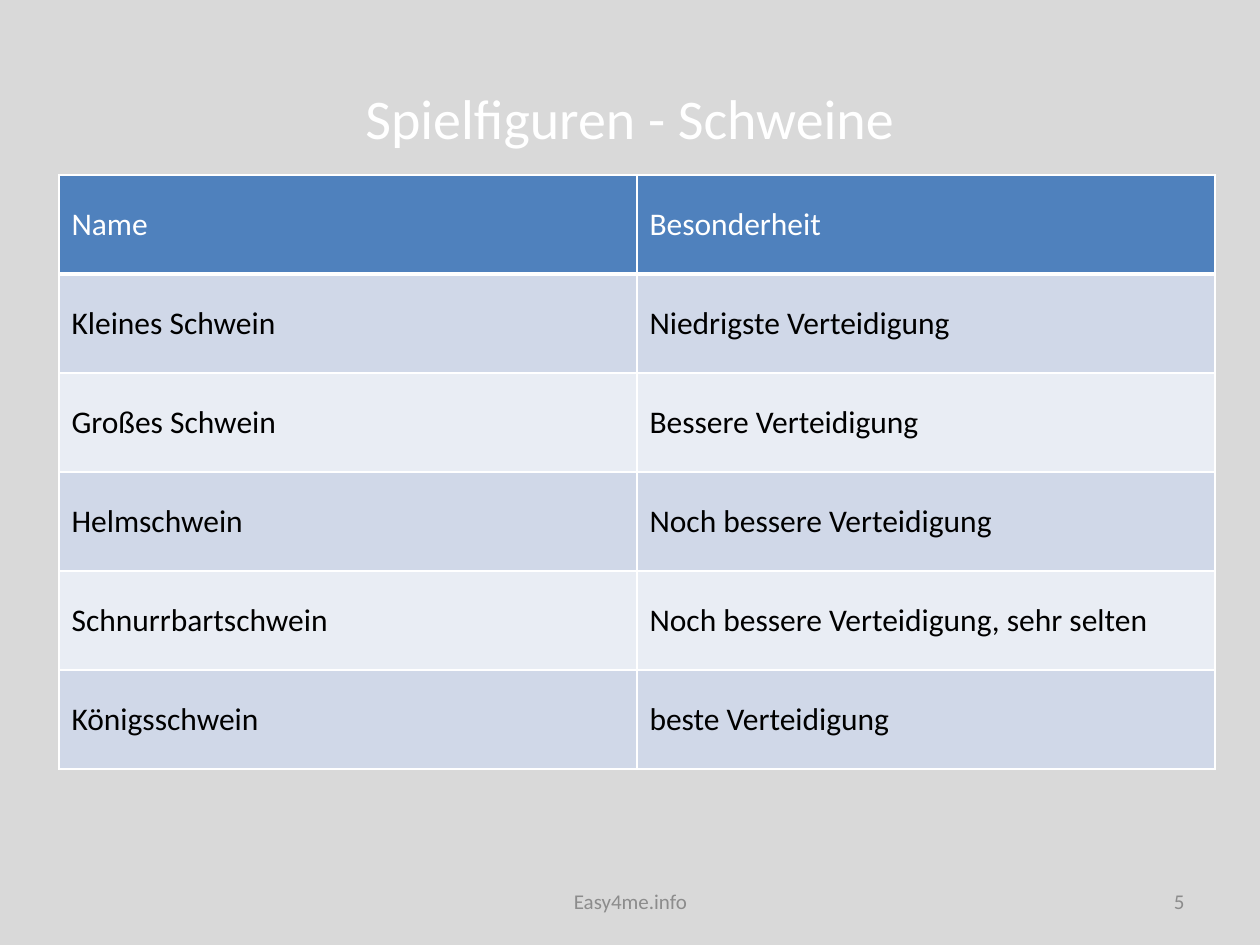
from dataclasses import dataclass

from lxml.etree import SubElement
from pptx import Presentation
from pptx.dml.color import RGBColor
from pptx.enum.text import MSO_ANCHOR, PP_ALIGN
from pptx.oxml.ns import qn
from pptx.util import Emu, Pt

PX_PER_INCH = 126
FONT = "Calibri"
WHITE, BLACK, GREY = "FFFFFF", "000000", "8C8C8C"
BACKGROUND = "D9D9D9"
HEADER_FILL = "4F81BD"
BAND_FILLS = ("D0D8E8", "E9EDF4")

ROWS = [
    ("Name", "Besonderheit"),
    ("Kleines Schwein", "Niedrigste Verteidigung"),
    ("Großes Schwein", "Bessere Verteidigung"),
    ("Helmschwein", "Noch bessere Verteidigung"),
    ("Schnurrbartschwein", "Noch bessere Verteidigung, sehr selten"),
    ("Königsschwein", "beste Verteidigung"),
]
TABLE_LEFT, TABLE_TOP = 59, 175
COL_WIDTH, ROW_HEIGHT = 578, 99


@dataclass(frozen=True)
class FooterItem:
    text: str
    left: int
    width: int
    align: PP_ALIGN


FOOTER_TOP, FOOTER_HEIGHT = 876, 50
FOOTER = [
    FooterItem("Easy4me.info", 431, 399, PP_ALIGN.CENTER),
    FooterItem("5", 903, 294, PP_ALIGN.RIGHT),
]


def px(n: int) -> Emu:
    return Emu(round(n * 914400 / PX_PER_INCH))


def rgb(color: str) -> RGBColor:
    return RGBColor.from_string(color)


def write(tf, text: str, *, size: int, color: str, align=PP_ALIGN.LEFT) -> None:
    tf.word_wrap = True
    p = tf.paragraphs[0]
    p.alignment = align
    r = p.add_run()
    r.text = text
    r.font.name = FONT
    r.font.size = Pt(size)
    r.font.bold = False
    r.font.color.rgb = rgb(color)


def set_borders(cell, bottom: int = 1) -> None:
    """Draw white cell borders; must run before the fill is set."""
    tc_pr = cell._tc.get_or_add_tcPr()
    for side, width in (("L", 1), ("R", 1), ("T", 1), ("B", bottom)):
        ln = SubElement(tc_pr, qn(f"a:ln{side}"), w=str(Pt(width)))
        fill = SubElement(ln, qn("a:solidFill"))
        SubElement(fill, qn("a:srgbClr"), val=WHITE)


def add_title(slide, text: str) -> None:
    title = slide.shapes.title
    title.left, title.top, title.width, title.height = map(px, (63, 38, 1134, 158))
    title.text_frame.vertical_anchor = MSO_ANCHOR.MIDDLE
    write(title.text_frame, text, size=32, color=WHITE, align=PP_ALIGN.CENTER)


def add_pig_table(slide) -> None:
    n_rows, n_cols = len(ROWS), len(ROWS[0])
    table = slide.shapes.add_table(
        n_rows, n_cols, px(TABLE_LEFT), px(TABLE_TOP),
        px(n_cols * COL_WIDTH), px(n_rows * ROW_HEIGHT),
    ).table
    for col in table.columns:
        col.width = px(COL_WIDTH)
    for i, texts in enumerate(ROWS):
        header = i == 0
        table.rows[i].height = px(ROW_HEIGHT)
        for j, text in enumerate(texts):
            cell = table.cell(i, j)
            set_borders(cell, bottom=3 if header else 1)
            cell.fill.solid()
            cell.fill.fore_color.rgb = rgb(HEADER_FILL if header else BAND_FILLS[(i - 1) % 2])
            cell.vertical_anchor = MSO_ANCHOR.MIDDLE
            write(cell.text_frame, text, size=18, color=WHITE if header else BLACK)


def add_footer_item(slide, item: FooterItem) -> None:
    box = slide.shapes.add_textbox(
        px(item.left), px(FOOTER_TOP), px(item.width), px(FOOTER_HEIGHT))
    box.text_frame.vertical_anchor = MSO_ANCHOR.MIDDLE
    write(box.text_frame, item.text, size=12, color=GREY, align=item.align)


def main() -> None:
    prs = Presentation()
    prs.slide_width, prs.slide_height = px(1260), px(945)
    slide = prs.slides.add_slide(prs.slide_layouts[5])
    slide.background.fill.solid()
    slide.background.fill.fore_color.rgb = rgb(BACKGROUND)

    add_title(slide, "Spielfiguren - Schweine")
    add_pig_table(slide)
    for item in FOOTER:
        add_footer_item(slide, item)
    prs.save("out.pptx")


if __name__ == "__main__":
    main()
